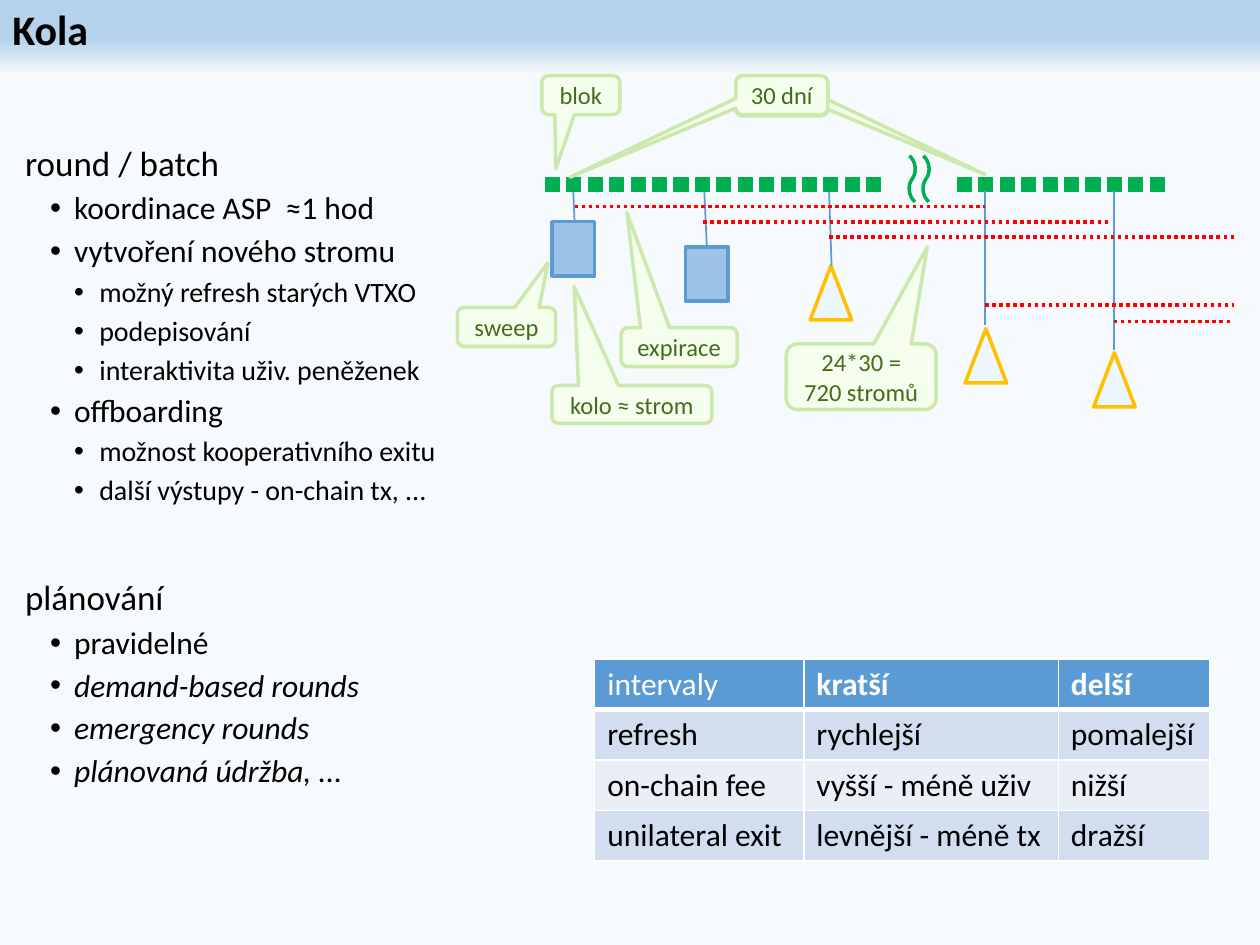
from copy import deepcopy
from typing import NamedTuple

from lxml.etree import SubElement
from pptx import Presentation
from pptx.dml.color import RGBColor
from pptx.enum.dml import MSO_LINE
from pptx.enum.shapes import MSO_CONNECTOR, MSO_SHAPE
from pptx.enum.text import MSO_ANCHOR, PP_ALIGN
from pptx.oxml.ns import qn
from pptx.util import Inches, Pt

FONT = "Calibri"
BLACK, WHITE = "000000", "FFFFFF"
GREEN, RED, BLUE, AMBER = "00B050", "FF0000", "5B9BD5", "FFC000"


class Item(NamedTuple):
    level: int
    text: str
    italic: bool = False
    before: float = 5


class Level(NamedTuple):
    size: int
    left: float
    hang: float


class Callout(NamedTuple):
    text: str
    left: float
    top: float
    width: float
    height: float
    tip_x: float
    tip_y: float
    wrap: bool = False


class Stem(NamedTuple):
    x: float
    node_x: float
    node_y: float


class Expiry(NamedTuple):
    start: float
    end: float
    y: float


LEVELS = [Level(20, 0, 0), Level(18, 0.39, 0.19), Level(16, 0.59, 0.2)]
ITEMS = [
    Item(0, "round / batch", before=0),
    Item(1, "koordinace ASP  ≈1 hod"),
    Item(1, "vytvoření nového stromu"),
    Item(2, "možný refresh starých VTXO"),
    Item(2, "podepisování"),
    Item(2, "interaktivita uživ. peněženek"),
    Item(1, "offboarding"),
    Item(2, "možnost kooperativního exitu"),
    Item(2, "další výstupy - on-chain tx, ..."),
    Item(0, "plánování", before=42),
    Item(1, "pravidelné"),
    Item(1, "demand-based rounds", italic=True),
    Item(1, "emergency rounds", italic=True),
    Item(1, "plánovaná údržba, ...", italic=True),
]
TABLE = [
    ["intervaly", "kratší", "delší"],
    ["refresh", "rychlejší", "pomalejší"],
    ["on-chain fee", "vyšší - méně uživ", "nižší"],
    ["unilateral exit", "levnější - méně tx", "dražší"],
]
COLUMNS = [1.66, 2.02, 1.2]
STEMS = [Stem(4.55, 4.56, 1.76), Stem(5.59, 5.61, 1.96), Stem(6.58, 6.6, 2.11),
         Stem(7.82, 7.82, 2.58), Stem(8.84, 8.84, 2.78)]
TREES = [(6.43, 2.11), (7.66, 2.61), (8.68, 2.8)]
SWEPT = [(4.38, 1.76), (5.44, 1.96)]
EXPIRIES = [Expiry(4.56, 7.82, 1.64), Expiry(5.58, 8.79, 1.76), Expiry(6.58, 9.79, 1.88),
            Expiry(7.82, 9.79, 2.42), Expiry(8.84, 9.79, 2.55)]
CALLOUTS = [
    Callout("blok", 4.3, 0.6, 0.62, 0.31, -0.32, 1.89),
    Callout("kolo ≈ strom", 4.38, 3.06, 1.27, 0.3, -0.36, -3.12),
    Callout("", 5.84, 0.61, 0.73, 0.31, 2.21, 2),
    Callout("expirace", 4.93, 2.6, 0.92, 0.31, -0.45, -3.44),
    Callout("24*30 = 720 stromů", 6.24, 2.73, 1.19, 0.52, 0.44, -1.98, wrap=True),
    Callout("30 dní", 5.84, 0.6, 0.73, 0.31, -2.3, 2.1),
    Callout("sweep", 3.63, 2.44, 0.78, 0.31, 0.42, -1.64),
]


def rgb(color: str) -> RGBColor:
    return RGBColor.from_string(color)


def write(p, text: str, size: float = 18, color: str = BLACK, bold: bool = False,
          italic: bool = False, align=PP_ALIGN.LEFT) -> None:
    p.alignment = align
    r = p.add_run()
    r.text = text
    r.font.name, r.font.size = FONT, Pt(size)
    r.font.bold, r.font.italic = bold, italic
    r.font.color.rgb = rgb(color)


def add_box(s, left: float, top: float, width: float, height: float):
    tf = s.shapes.add_textbox(*map(Inches, (left, top, width, height))).text_frame
    tf.word_wrap = True
    return tf


def add_shape(s, kind, left: float, top: float, width: float, height: float,
              fill: str, line: str, weight: float = 2):
    sp = s.shapes.add_shape(kind, *map(Inches, (left, top, width, height)))
    sp.shadow.inherit = False
    sp.fill.solid()
    sp.fill.fore_color.rgb = rgb(fill)
    sp.line.color.rgb = rgb(line)
    sp.line.width = Pt(weight)
    return sp


def add_line(s, x1: float, y1: float, x2: float, y2: float, color: str, weight: float,
             kind=MSO_CONNECTOR.STRAIGHT, dash=None, angle: int = 0) -> None:
    line = s.shapes.add_connector(kind, *map(Inches, (x1, y1, x2, y2)))
    line.line.color.rgb = rgb(color)
    line.line.width = Pt(weight)
    if dash:
        line.line.dash_style = dash
    sp_pr = line._element.spPr
    if angle:
        sp_pr.find(qn("a:xfrm")).set("rot", str(angle * 60000))
    SubElement(sp_pr, qn("a:effectLst"))


def add_callout(s, c: Callout) -> None:
    sp = add_shape(s, MSO_SHAPE.ROUNDED_RECTANGULAR_CALLOUT, c.left, c.top, c.width, c.height,
                   "F6FFED", "CCE9AD")
    for i, value in enumerate((c.tip_x, c.tip_y, 0.17)):
        sp.adjustments[i] = value
    if c.text:
        tf = sp.text_frame
        tf.word_wrap = c.wrap
        tf.vertical_anchor = MSO_ANCHOR.MIDDLE
        write(tf.paragraphs[0], c.text, size=14, color="456A1C", align=PP_ALIGN.CENTER)


def add_background(s) -> None:
    fill = s.background.fill
    fill.gradient()
    fill.gradient_angle = 270
    gs_lst = s._element.find(".//" + qn("a:gsLst"))
    gs_lst.append(deepcopy(gs_lst[0]))
    stops = [(0, "B5D2EC"), (0.04, "B5D2EC"), (0.08, "F7FAFD")]
    for stop, (position, color) in zip(fill.gradient_stops, stops):
        stop.position = position
        stop.color.rgb = rgb(color)


def add_outline(s) -> None:
    """Add the bulleted list on the left."""
    tf = add_box(s, 0.1, 0.67, 9.81, 6.75)
    tf.margin_top = Inches(0.49)
    for i, item in enumerate(ITEMS):
        p = tf.add_paragraph() if i else tf.paragraphs[0]
        level = LEVELS[item.level]
        p.level, p.line_spacing, p.space_before = item.level, 0.9, Pt(item.before)
        write(p, item.text, size=level.size, italic=item.italic)
        if item.level:
            p_pr = p._p.get_or_add_pPr()
            p_pr.set("marL", str(Inches(level.left)))
            p_pr.set("indent", str(-Inches(level.hang)))
            SubElement(p_pr, qn("a:buFont"), typeface="Arial")
            SubElement(p_pr, qn("a:buChar"), char="•")


def add_borders(cell, bottom: float) -> None:
    tc_pr = cell._tc.get_or_add_tcPr()
    for side, weight in (("L", 1), ("R", 1), ("T", 1), ("B", bottom)):
        ln = SubElement(tc_pr, qn(f"a:ln{side}"), w=str(Pt(weight)))
        SubElement(SubElement(ln, qn("a:solidFill")), qn("a:srgbClr"), val=WHITE)


def add_intervals(s) -> None:
    table = s.shapes.add_table(len(TABLE), len(COLUMNS), Inches(4.72), Inches(5.23),
                               Inches(sum(COLUMNS)), Inches(1.6)).table
    for column, width in zip(table.columns, COLUMNS):
        column.width = Inches(width)
    for i, row in enumerate(TABLE):
        header = i == 0
        fill = BLUE if header else ("EAEFF7", "D2DEEF")[i % 2]
        for j, text in enumerate(row):
            cell = table.cell(i, j)
            add_borders(cell, 3 if header else 1)
            cell.fill.solid()
            cell.fill.fore_color.rgb = rgb(fill)
            write(cell.text_frame.paragraphs[0], text, color=WHITE if header else BLACK,
                  bold=header and j > 0)


def add_timeline(s) -> None:
    for start, count in ((4.33, 16), (7.6, 10)):
        for i in range(count):
            add_shape(s, MSO_SHAPE.RECTANGLE, start + 0.17 * i, 1.41, 0.11, 0.11, GREEN, GREEN, 0)
    for x in (7.11, 7.22):
        add_line(s, x, 1.29, x + 0.26, 1.55, GREEN, 2, kind=MSO_CONNECTOR.CURVE, angle=38)
    for x, y in TREES:
        add_shape(s, MSO_SHAPE.ISOSCELES_TRIANGLE, x, y, 0.33, 0.43, "ECF7FE", AMBER)
    for stem in STEMS:
        add_line(s, stem.node_x, stem.node_y, stem.x, 1.52, BLUE, 1)
    for e in EXPIRIES:
        add_line(s, e.start, e.y, e.end, e.y, RED, 2, dash=MSO_LINE.ROUND_DOT)
    for x, y in SWEPT:
        add_shape(s, MSO_SHAPE.RECTANGLE, x, y, 0.34, 0.43, "9DC3E6", BLUE)
    for callout in CALLOUTS:
        add_callout(s, callout)


def main() -> None:
    prs = Presentation()
    prs.slide_width, prs.slide_height = Inches(10), Inches(7.5)
    s = prs.slides.add_slide(prs.slide_layouts[6])
    add_background(s)
    add_outline(s)
    title = add_box(s, 0, 0, 10, 0.51)
    title.vertical_anchor = MSO_ANCHOR.MIDDLE
    title.paragraphs[0].line_spacing = 0.9
    write(title.paragraphs[0], "Kola", size=24, bold=True)
    add_intervals(s)
    add_timeline(s)
    prs.save("out.pptx")


if __name__ == "__main__":
    main()
